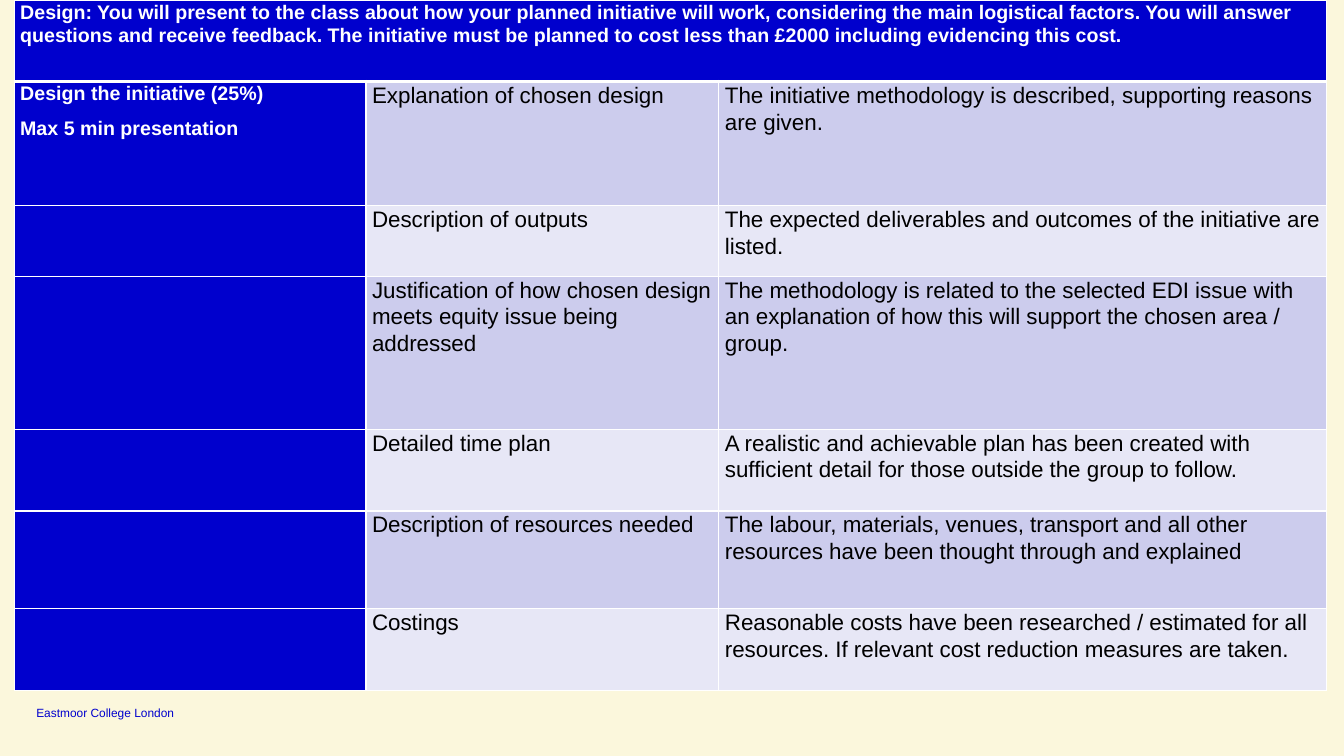
from dataclasses import dataclass

from lxml.etree import SubElement
from pptx import Presentation
from pptx.dml.color import RGBColor
from pptx.enum.text import MSO_ANCHOR
from pptx.oxml.ns import qn
from pptx.util import Inches, Pt


@dataclass(frozen=True)
class Theme:
    font: str = "Arial"
    cream: str = "FBF7DC"
    blue: str = "0000CD"
    white: str = "FFFFFF"
    black: str = "000000"
    bands: tuple = ("CCCCED", "E7E7F6")
    heading_size: float = 14
    body_size: float = 16
    footer_size: float = 8.5
    thin_line: float = 1
    thick_line: float = 3


THEME = Theme()

COLUMN_WIDTHS = (3.49, 3.5, 6.03)
ROW_HEIGHTS = (0.81, 1.23, 0.7, 1.52, 0.81, 0.97, 0.81)

BRIEF = (
    "Design: You will present to the class about how your planned initiative will work, "
    "considering the main logistical factors. You will answer questions and receive feedback. "
    "The initiative must be planned to cost less than £2000 including evidencing this cost."
)
ASSESSMENT = ("Design the initiative (25%)", "Max 5 min presentation")
CRITERIA = (
    ("Explanation of chosen design",
     "The initiative methodology is described, supporting reasons are given."),
    ("Description of outputs",
     "The expected deliverables and outcomes of the initiative are listed."),
    ("Justification of how chosen design meets equity issue being addressed",
     "The methodology is related to the selected EDI issue with an explanation of how "
     "this will support the chosen area / group."),
    ("Detailed time plan",
     "A realistic and achievable plan has been created with sufficient detail for those "
     "outside the group to follow."),
    ("Description of resources needed",
     "The labour, materials, venues, transport and all other resources have been thought "
     "through and explained"),
    ("Costings",
     "Reasonable costs have been researched / estimated for all resources. If relevant "
     "cost reduction measures are taken."),
)


def write_text(frame, *lines, size, color, bold=False, line_spacing=1.0, space_after=0):
    for index, line in enumerate(lines):
        para = frame.add_paragraph() if index else frame.paragraphs[0]
        para.line_spacing = line_spacing
        para.space_after = Pt(space_after)
        span = para.add_run()
        span.text = line
        span.font.name = THEME.font
        span.font.size = Pt(size)
        span.font.bold = bold
        span.font.color.rgb = RGBColor.from_string(color)


def add_borders(cell, **widths):
    properties = cell._tc.get_or_add_tcPr()
    for side in ("L", "R", "T", "B"):
        width = Pt(widths.get(side, THEME.thin_line))
        line = SubElement(properties, qn(f"a:ln{side}"), w=str(width))
        fill = SubElement(line, qn("a:solidFill"))
        SubElement(fill, qn("a:srgbClr"), val=THEME.white)


def style_cell(cell, fill, **border_widths):
    cell.margin_left = cell.margin_right = Inches(0.06)
    cell.margin_top = cell.margin_bottom = 0
    add_borders(cell, **border_widths)
    cell.fill.solid()
    cell.fill.fore_color.rgb = RGBColor.from_string(fill)


def write_cell(cell, *lines, heading=False):
    write_text(
        cell.text_frame,
        *lines,
        size=THEME.heading_size if heading else THEME.body_size,
        color=THEME.white if heading else THEME.black,
        bold=heading,
        line_spacing=1.07,
        space_after=8,
    )


def add_criteria_table(page):
    frame = page.shapes.add_table(
        len(ROW_HEIGHTS), len(COLUMN_WIDTHS), Inches(0.14), 0,
        Inches(sum(COLUMN_WIDTHS)), Inches(sum(ROW_HEIGHTS)),
    )
    table = frame.table
    table.horz_banding = False
    for column, width in zip(table.columns, COLUMN_WIDTHS):
        column.width = Inches(width)
    for row, height in zip(table.rows, ROW_HEIGHTS):
        row.height = Inches(height)

    for cell in table.rows[0].cells:
        style_cell(cell, THEME.blue, B=THEME.thick_line)
    table.cell(0, 0).merge(table.cell(0, len(COLUMN_WIDTHS) - 1))
    write_cell(table.cell(0, 0), BRIEF, heading=True)

    for number, criterion in enumerate(CRITERIA, start=1):
        top = THEME.thick_line if number == 1 else THEME.thin_line
        style_cell(table.cell(number, 0), THEME.blue, T=top)
        band = THEME.bands[(number - 1) % len(THEME.bands)]
        for column, text in enumerate(criterion, start=1):
            cell = table.cell(number, column)
            style_cell(cell, band, T=top)
            write_cell(cell, text)
    write_cell(table.cell(1, 0), *ASSESSMENT, heading=True)


def add_footer(page, text):
    box = page.shapes.add_textbox(Inches(0.36), Inches(6.99), Inches(1.55), Inches(0.15))
    frame = box.text_frame
    frame.word_wrap = True
    frame.vertical_anchor = MSO_ANCHOR.BOTTOM
    frame.margin_left = frame.margin_right = frame.margin_top = frame.margin_bottom = 0
    write_text(frame, text, size=THEME.footer_size, color=THEME.blue)


def main():
    deck = Presentation()
    deck.slide_width = Inches(13.33)
    deck.slide_height = Inches(7.5)
    page = deck.slides.add_slide(deck.slide_layouts.get_by_name("Blank"))
    page.background.fill.solid()
    page.background.fill.fore_color.rgb = RGBColor.from_string(THEME.cream)
    add_footer(page, "Eastmoor College London")
    add_criteria_table(page)
    deck.save("out.pptx")


if __name__ == "__main__":
    main()
